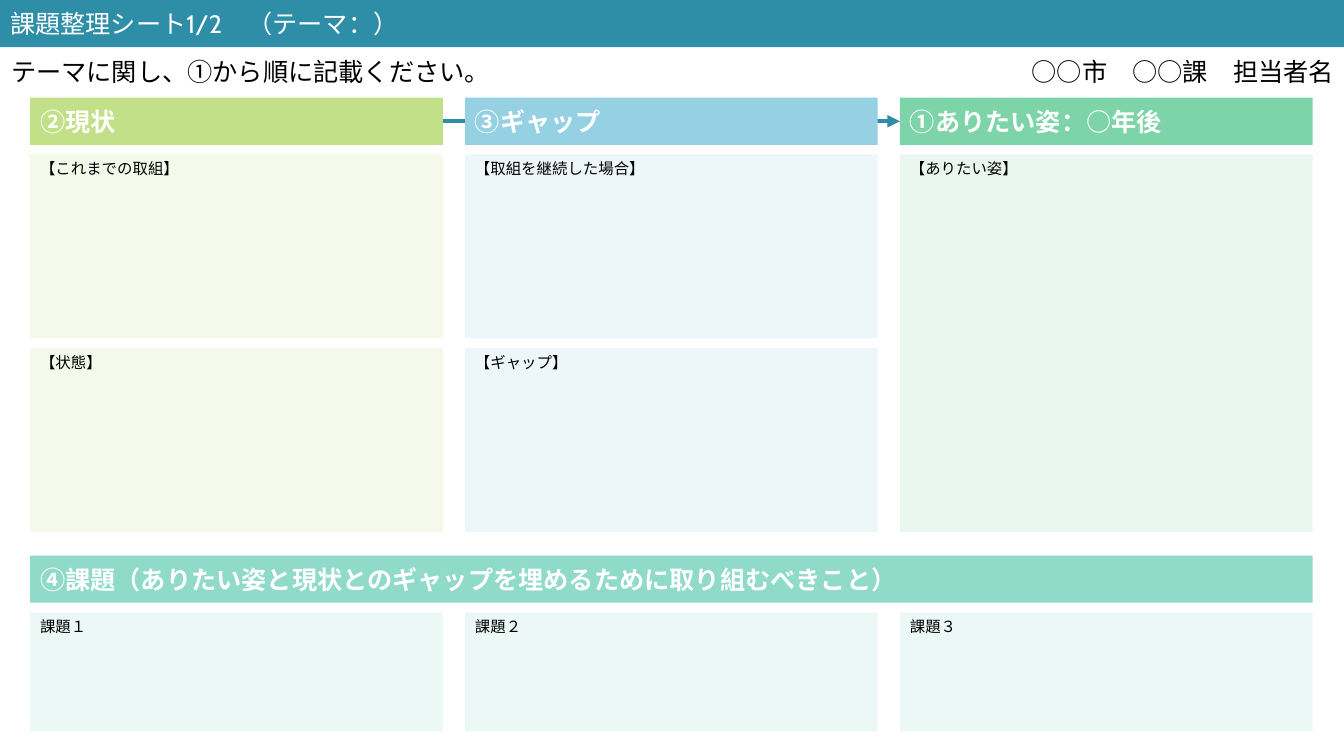
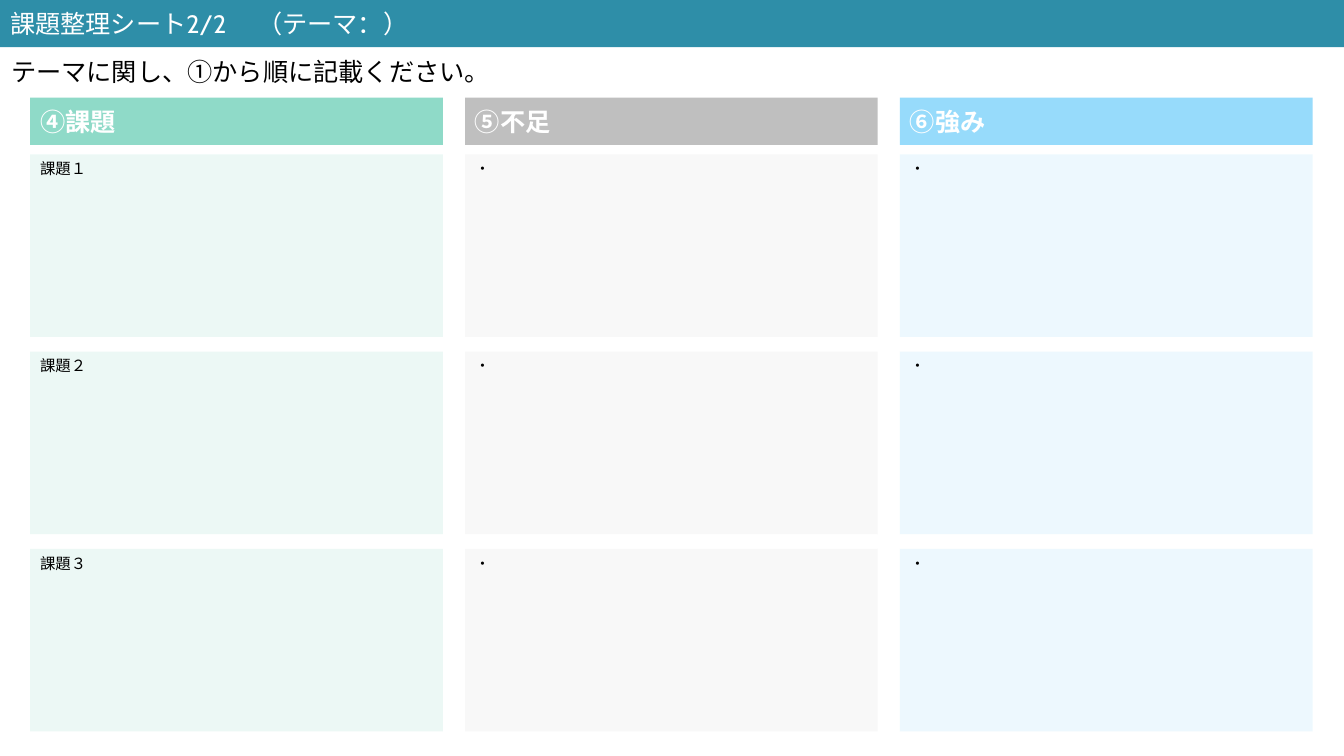
from lxml import etree
from pptx import Presentation
from pptx import util as u
from pptx.dml.color import RGBColor
from pptx.enum import shapes, text
from pptx.oxml.ns import qn

FONT = "Cabin"
COLORS = {
    "band": "2E8EA8", "white": "FFFFFF", "black": "000000",
    "now": "C2E088", "now_pale": "EBF5D7",
    "gap": "95D1E2", "gap_pale": "DCF0F5",
    "goal": "7DD4A9", "goal_pale": "D4F1E2",
    "task": "8FDAC8", "task_pale": "DAF3ED",
    "lack": "BFBFBF", "lack_pale": "F2F2F2",
    "strength": "97DBFB", "strength_pale": "DCF3FE",
}

GUIDE = "テーマに関し、①から順に記載ください。"
OWNER = "○○市　○○課　担当者名"
TASKS = ["課題１", "課題２", "課題３"]
TASK_HEADING = "④課題（ありたい姿と現状とのギャップを埋めるために取り組むべきこと）"
SHEETS = [
    {
        "title": "課題整理シート1/2　（テーマ：）",
        "columns": [
            ("②現状", "now", ["【これまでの取組】", "【状態】"]),
            ("③ギャップ", "gap", ["【取組を継続した場合】", "【ギャップ】"]),
            ("①ありたい姿：○年後", "goal", ["【ありたい姿】"]),
        ],
        "bottom": 13.41, "row_gap": 0.24,
    },
    {
        "title": "課題整理シート2/2 　（テーマ：）",
        "columns": [
            ("④課題", "task", TASKS),
            ("⑤不足", "lack", ["・"] * 3),
            ("⑥強み", "strength", ["・"] * 3),
        ],
        "bottom": 18.43, "row_gap": 0.37,
    },
]

PAGE_W, PAGE_H = 33.87, 19.05
BAND_H = 1.19
MARGIN, COLUMN_W, PITCH = 0.76, 10.4, 10.96
HEADING_TOP, TASK_TOP, PAGE_BOTTOM = 2.46, 14, 18.43
HEADING_GAP = 0.24


def rgb(name):
    return RGBColor.from_string(COLORS[name])


def column_left(index):
    return MARGIN + index * PITCH


def write(shape, words, size, color, bold=False,
          anchor=text.MSO_ANCHOR.TOP, align=text.PP_ALIGN.LEFT):
    frame = shape.text_frame
    frame.word_wrap = True
    frame.auto_size = text.MSO_AUTO_SIZE.NONE
    frame.vertical_anchor = anchor
    para = frame.paragraphs[0]
    para.alignment = align
    span = para.add_run()
    span.text = words
    span.font.name = FONT
    span.font.size = u.Pt(size)
    span.font.bold = bold
    span.font.color.rgb = rgb(color)


def paint(shape, color, opacity=100):
    shape.fill.solid()
    shape.fill.fore_color.rgb = rgb(color)
    if opacity < 100:
        tint = shape.fill._xPr.find(qn("a:solidFill"))[0]
        etree.SubElement(tint, qn("a:alpha"), val=str(opacity * 1000))


def add_box(page, left, top, width, height, color, opacity=100):
    box = page.shapes.add_shape(shapes.MSO_SHAPE.RECTANGLE,
                                *map(u.Cm, (left, top, width, height)))
    box.shadow.inherit = False
    box.line.fill.background()
    paint(box, color, opacity)
    return box


def add_heading(page, left, top, width, words, color):
    box = add_box(page, left, top, width, BAND_H, color)
    write(box, words, 18, "white", True, text.MSO_ANCHOR.MIDDLE)


def add_panel(page, left, top, height, words, color):
    box = add_box(page, left, top, COLUMN_W, height, color + "_pale", 50)
    write(box, words, 11, "black")


def add_note(page, left, width, words, align):
    box = page.shapes.add_textbox(*map(u.Cm, (left, 1.3, width, 1.02)))
    write(box, words, 18, "black", align=align)


def add_title(page, words):
    title = page.shapes.title
    title.left, title.top, title.width, title.height = map(u.Cm, (0, 0, PAGE_W, BAND_H))
    paint(title, "band")
    write(title, words, 18, "white", anchor=text.MSO_ANCHOR.MIDDLE)


def add_arrow(page):
    y = HEADING_TOP + BAND_H / 2
    ends = (column_left(0) + COLUMN_W, y, column_left(2), y)
    arrow = page.shapes.add_connector(shapes.MSO_CONNECTOR.STRAIGHT, *map(u.Cm, ends))
    arrow.line.color.rgb = rgb("band")
    arrow.line.width = u.Pt(3)
    etree.SubElement(arrow.line._get_or_add_ln(), qn("a:tailEnd"), type="triangle")
    etree.SubElement(arrow._element.spPr, qn("a:effectLst"))


def add_columns(page, sheet):
    top = HEADING_TOP + BAND_H + HEADING_GAP
    for index, (heading, color, labels) in enumerate(sheet["columns"]):
        left = column_left(index)
        add_heading(page, left, HEADING_TOP, COLUMN_W, heading, color)
        gap = sheet["row_gap"]
        step = (sheet["bottom"] - top + gap) / len(labels)
        for row, label in enumerate(labels):
            add_panel(page, left, top + row * step, step - gap, label, color)


def add_tasks(page):
    add_heading(page, MARGIN, TASK_TOP, 2 * PITCH + COLUMN_W, TASK_HEADING, "task")
    top = TASK_TOP + BAND_H + HEADING_GAP
    for index, label in enumerate(TASKS):
        add_panel(page, column_left(index), top, PAGE_BOTTOM - top, label, "task")


def main():
    deck = Presentation()
    deck.slide_width, deck.slide_height = u.Cm(PAGE_W), u.Cm(PAGE_H)
    pages = []
    for sheet in SHEETS:
        page = deck.slides.add_slide(deck.slide_layouts[5])
        pages.append(page)
        add_title(page, sheet["title"])
        add_note(page, 0.03, 13.5, GUIDE, text.PP_ALIGN.LEFT)
        if page is pages[0]:
            add_arrow(page)
        add_columns(page, sheet)
    add_tasks(pages[0])
    add_note(pages[0], PAGE_W - COLUMN_W, COLUMN_W, OWNER, text.PP_ALIGN.RIGHT)
    deck.save("out.pptx")


if __name__ == "__main__":
    main()
